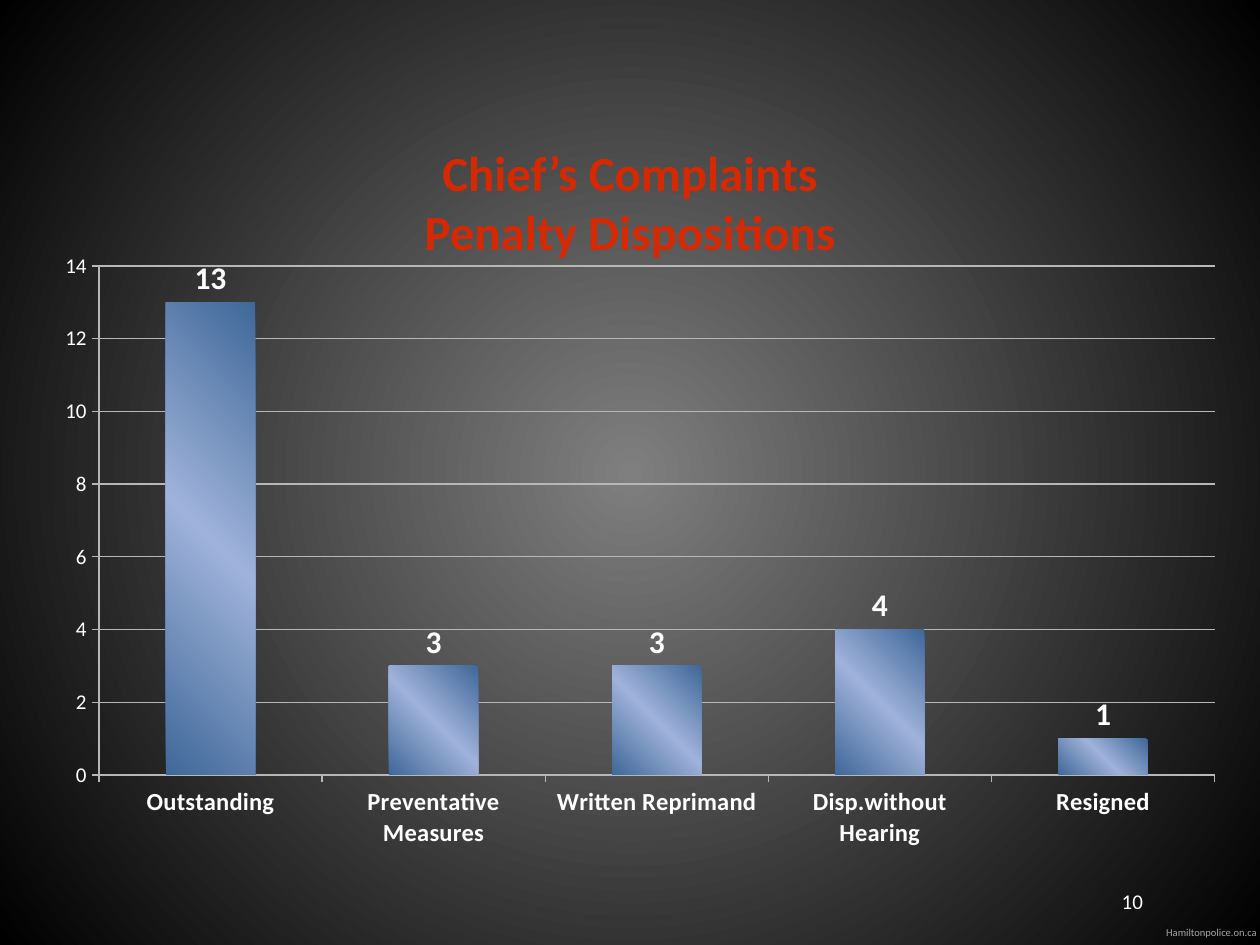
from copy import deepcopy
from dataclasses import dataclass

from lxml import etree
from pptx import Presentation
from pptx.chart.data import CategoryChartData
from pptx.dml.color import RGBColor as RGB
from pptx.enum.chart import XL_CHART_TYPE as ChartType
from pptx.enum.chart import XL_LABEL_POSITION as LabelPos
from pptx.enum.chart import XL_TICK_MARK as Tick
from pptx.enum.text import MSO_ANCHOR as Anchor
from pptx.enum.text import PP_ALIGN as Align
from pptx.oxml import parse_xml
from pptx.oxml.ns import nsdecls, qn
from pptx.util import Inches, Pt


@dataclass(frozen=True)
class Theme:
    """Colours, font and type sizes of the slide."""
    font: str = "Calibri"
    white: RGB = RGB(0xFF, 0xFF, 0xFF)
    red: RGB = RGB(0xD6, 0x29, 0x00)
    credit: RGB = RGB(0xA6, 0xA6, 0xA6)
    line: RGB = RGB(0xB7, 0xB7, 0xB7)
    centre: RGB = RGB(0x7F, 0x7F, 0x7F)
    edge: RGB = RGB(0, 0, 0)
    bar_dark: RGB = RGB(0x3F, 0x68, 0x99)
    bar_light: RGB = RGB(0x9F, 0xB2, 0xDA)
    title_size: int = 28
    value_size: int = 18
    category_size: int = 14
    small_size: int = 12
    credit_size: int = 6


@dataclass(frozen=True)
class Label:
    """A line of text with its box in inches."""
    text: str
    box: tuple[float, float, float, float]
    size: int
    color: RGB
    align: Align
    inset: float


@dataclass(frozen=True)
class Disposition:
    """A penalty outcome and its number of complaints."""
    name: str
    count: int


T = Theme()
LABELS = [
    Label("Hamiltonpolice.on.ca", (9.23, 7.35, 0.77, 0.1), T.credit_size, T.credit, Align.CENTER, 0),
    Label("10", (7.17, 6.95, 2, 0.4), T.small_size, T.white, Align.RIGHT, 0.1),
]
DISPOSITIONS = [
    Disposition("Outstanding", 13),
    Disposition("Preventative Measures", 3),
    Disposition("Written Reprimand", 3),
    Disposition("Disp.without Hearing", 4),
    Disposition("Resigned", 1),
]
PLOT = {"x": 0.048, "y": 0.039, "w": 0.932, "h": 0.821}


def set_all(obj, values: dict) -> None:
    """Set each named attribute on an object."""
    for name, value in values.items():
        setattr(obj, name, value)


def set_font(font, size: int, color: RGB, bold: bool = False) -> None:
    """Format a font from the theme."""
    set_all(font, {"name": T.font, "size": Pt(size), "bold": bold})
    font.color.rgb = color


def place(sp, box: tuple[float, float, float, float]) -> None:
    """Move a shape to a box in inches."""
    set_all(sp, dict(zip(("left", "top", "width", "height"), map(Inches, box))))


def set_stops(fill, first: RGB, last: RGB) -> None:
    """Give a fill a two-stop gradient."""
    fill.gradient()
    for stop, color, position in zip(fill.gradient_stops, (first, last), (0, 1)):
        stop.color.rgb = color
        stop.position = position


def paint_background(s) -> None:
    """Fill the slide with a radial gradient."""
    set_stops(s.background.fill, T.centre, T.edge)
    grad = next(s.element.iter(qn("a:gradFill")))
    grad.replace(grad.find(qn("a:lin")), parse_xml(
        f'<a:path {nsdecls("a")} path="circle">'
        '<a:fillToRect l="50000" t="50000" r="50000" b="50000"/></a:path>'))


def paint_bars(series) -> None:
    """Fill the bars with a diagonal light band."""
    fill = series.format.fill
    set_stops(fill, T.bar_dark, T.bar_dark)
    fill.gradient_angle = 45
    stops = next(series.format.fill._xPr.iter(qn("a:gsLst")))
    stops.insert(1, deepcopy(stops[0]))
    middle = fill.gradient_stops[1]
    middle.position = 0.5
    middle.color.rgb = T.bar_light


def set_title(s) -> None:
    """Place and format the title."""
    sp = s.shapes.title
    place(sp, (0.5, 1.08, 9, 1.25))
    tf = sp.text_frame
    set_all(tf, {"text": "Chief’s Complaints\vPenalty Dispositions",
                 "word_wrap": True, "vertical_anchor": Anchor.TOP})
    p = tf.paragraphs[0]
    p.alignment = Align.CENTER
    for r in p.runs:
        set_font(r.font, T.title_size, T.red, True)


def add_label(s, label: Label) -> None:
    """Add a single-line text box."""
    sp = s.shapes.add_textbox(*map(Inches, label.box))
    tf = sp.text_frame
    sides = ("left", "top", "right", "bottom")
    set_all(tf, {f"margin_{side}": Inches(label.inset) for side in sides})
    set_all(tf, {"word_wrap": label.inset > 0, "vertical_anchor": Anchor.MIDDLE})
    p = tf.paragraphs[0]
    p.alignment = label.align
    r = p.add_run()
    r.text = label.text
    set_font(r.font, label.size, label.color)


def set_plot_layout(chart) -> None:
    """Fix the inner plot area within the chart."""
    area = next(chart._chartSpace.iter(qn("c:plotArea")))
    for old in area.findall(qn("c:layout")):
        area.remove(old)
    layout = parse_xml(f'<c:layout {nsdecls("c")}><c:manualLayout/></c:layout>')
    values = {"layoutTarget": "inner", "xMode": "edge", "yMode": "edge", **PLOT}
    for name, value in values.items():
        etree.SubElement(layout[0], qn(f"c:{name}")).set("val", str(value))
    area.insert(0, layout)


def add_chart(s) -> None:
    """Add the column chart of dispositions."""
    data = CategoryChartData()
    data.categories = [d.name for d in DISPOSITIONS]
    data.add_series("Series 1", [d.count for d in DISPOSITIONS])
    box = map(Inches, (0.33, 1.92, 9.5, 4.92))
    chart = s.shapes.add_chart(ChartType.COLUMN_CLUSTERED, *box, data).chart
    set_all(chart, {"has_legend": False, "has_title": False})
    set_font(chart.font, T.value_size, T.white)
    set_plot_layout(chart)

    plot = chart.plots[0]
    set_all(plot, {"gap_width": 150, "vary_by_categories": False, "has_data_labels": True})
    set_all(plot.data_labels, {"show_value": True, "position": LabelPos.OUTSIDE_END})
    set_font(plot.data_labels.font, T.value_size, T.white, True)
    paint_bars(plot.series[0])

    value, category = chart.value_axis, chart.category_axis
    set_all(value, {"minimum_scale": 0, "maximum_scale": 14, "major_unit": 2,
                    "has_major_gridlines": True})
    set_font(value.tick_labels.font, T.small_size, T.white)
    set_font(category.tick_labels.font, T.category_size, T.white, True)
    for axis in (value, category):
        set_all(axis, {"major_tick_mark": Tick.OUTSIDE, "minor_tick_mark": Tick.NONE})
    for part in (value, category, value.major_gridlines):
        part.format.line.color.rgb = T.line
        part.format.line.width = Pt(0.75)


def main() -> None:
    """Build and save the slide."""
    prs = Presentation()
    set_all(prs, {"slide_width": Inches(10), "slide_height": Inches(7.5)})
    s = prs.slides.add_slide(prs.slide_layouts[5])
    paint_background(s)
    set_title(s)
    for label in LABELS:
        add_label(s, label)
    add_chart(s)
    prs.save("out.pptx")


if __name__ == "__main__":
    main()
